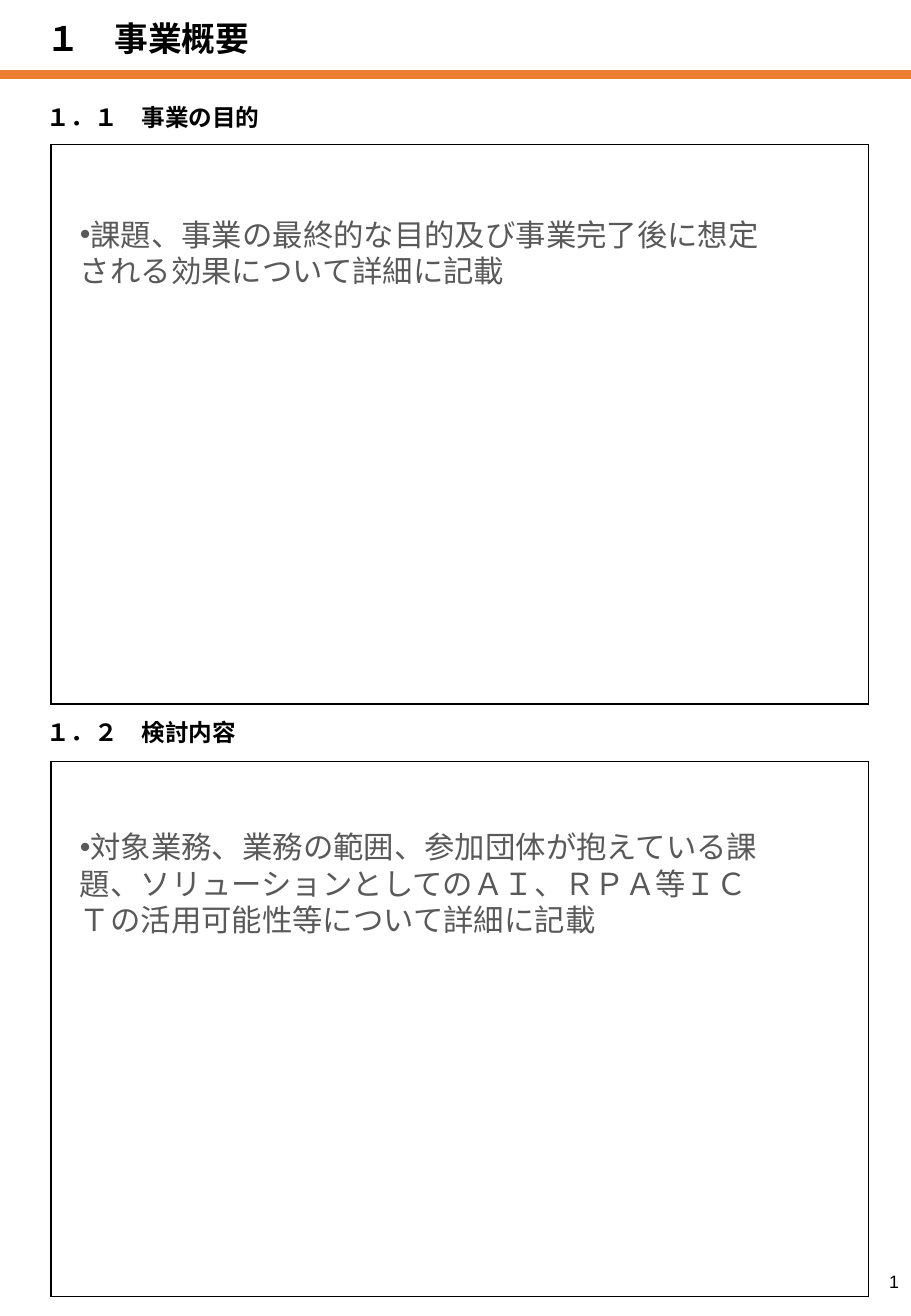
from lxml import etree
from pptx import Presentation
from pptx.dml.color import RGBColor
from pptx.enum import shapes, text
from pptx.oxml import ns
from pptx.util import Pt

COLORS = {"ink": "000000", "guide": "595959", "rule": "ED7D31"}
TITLE = "１　事業概要"
PAGE_NUMBER = "1"
SECTIONS = [
    {"heading": "１．１　事業の目的", "heading_top": 46.3, "frame_top": 85.6,
     "frame_height": 331.6, "guide_top": 124.5, "guide_height": 51.12,
     "guide": "課題、事業の最終的な目的及び事業完了後に想定される効果について詳細に記載"},
    {"heading": "１．２　検討内容", "heading_top": 410.6, "frame_top": 451.1,
     "frame_height": 317, "guide_top": 487.4, "guide_height": 72.72,
     "guide": "対象業務、業務の範囲、参加団体が抱えている課題、ソリューションとしての"
              "ＡＩ、ＲＰＡ等ＩＣＴの活用可能性等について詳細に記載"},
]
STYLES = {
    "title": {"font": "Arial", "color": "ink", "anchor": text.MSO_ANCHOR.MIDDLE,
              "run": {"size": Pt(20), "bold": True},
              "paragraph": {"line_spacing": 0.9}},
    "heading": {"font": "Noto Sans CJK JP", "color": "ink", "anchor": text.MSO_ANCHOR.MIDDLE,
                "run": {"size": Pt(14), "bold": True}, "paragraph": {}},
    "guide": {"font": "Calibri", "color": "guide", "anchor": text.MSO_ANCHOR.TOP,
              "run": {"size": Pt(18)}, "paragraph": {}, "bullet": "•"},
    "page": {"font": "Arial", "color": "ink", "anchor": text.MSO_ANCHOR.MIDDLE,
             "run": {"size": Pt(10.6)}, "paragraph": {"alignment": text.PP_ALIGN.RIGHT}},
}
PAGE_WIDTH, PAGE_HEIGHT = 540, 779.76
HEADING_LEFT, FRAME_LEFT, GUIDE_LEFT = 20.6, 30.24, 40.32
FRAME_WIDTH, GUIDE_WIDTH, HEADING_WIDTH = 484.56, 419.04, 363.6
RULE_TOP = 44.2


def set_all(target, values):
    for name, value in values.items():
        setattr(target, name, value)


def add_bullet(paragraph, mark):
    properties = paragraph._p.get_or_add_pPr()
    set_all(properties, {})
    for name in ("marL", "indent"):
        properties.set(name, "0")
    etree.SubElement(properties, ns.qn("a:buFont"), typeface="Arial")
    etree.SubElement(properties, ns.qn("a:buChar"), char=mark)


def write(slide, words, style_name, *box):
    style = STYLES[style_name]
    frame = slide.shapes.add_textbox(*map(Pt, box)).text_frame
    set_all(frame, {"word_wrap": True, "vertical_anchor": style["anchor"]})
    paragraph = frame.paragraphs[0]
    set_all(paragraph, style["paragraph"])
    if "bullet" in style:
        add_bullet(paragraph, style["bullet"])
    run = paragraph.add_run()
    run.text = words
    set_all(run.font, {"name": style["font"], **style["run"]})
    run.font.color.rgb = RGBColor.from_string(COLORS[style["color"]])
    east_asian = etree.SubElement(run.font._element, ns.qn("a:ea"))
    east_asian.set("typeface", style["font"])


def draw_frame(slide, top, height):
    box = map(Pt, (FRAME_LEFT, top, FRAME_WIDTH, height))
    table = slide.shapes.add_table(1, 1, *box).table
    set_all(table, {"first_row": False, "horz_banding": False})
    cell = table.cell(0, 0)
    properties = cell._tc.get_or_add_tcPr()
    for side in ("lnL", "lnR", "lnT", "lnB"):
        border = etree.SubElement(properties, ns.qn(f"a:{side}"), w=str(Pt(1)))
        fill = etree.SubElement(border, ns.qn("a:solidFill"))
        etree.SubElement(fill, ns.qn("a:srgbClr"), val=COLORS["ink"])
    cell.fill.background()


def draw_rule(slide):
    rule = slide.shapes.add_connector(
        shapes.MSO_CONNECTOR.STRAIGHT, 0, Pt(RULE_TOP), Pt(PAGE_WIDTH), Pt(RULE_TOP))
    rule.line.width = Pt(5)
    rule.line.color.rgb = RGBColor.from_string(COLORS["rule"])
    etree.SubElement(rule._element.spPr, ns.qn("a:effectLst"))


def main():
    deck = Presentation()
    set_all(deck, {"slide_width": Pt(PAGE_WIDTH), "slide_height": Pt(PAGE_HEIGHT)})
    slide = deck.slides.add_slide(deck.slide_layouts[6])
    draw_rule(slide)
    write(slide, PAGE_NUMBER, "page", 418.32, 738.72, 121.68, 41.04)
    write(slide, TITLE, "title", HEADING_LEFT, 3.1, 493.92, 41.76)
    for section in SECTIONS:
        write(slide, section["heading"], "heading",
              HEADING_LEFT, section["heading_top"], HEADING_WIDTH, 46.08)
        draw_frame(slide, section["frame_top"], section["frame_height"])
        write(slide, section["guide"], "guide",
              GUIDE_LEFT, section["guide_top"], GUIDE_WIDTH, section["guide_height"])
    deck.save("out.pptx")


if __name__ == "__main__":
    main()
